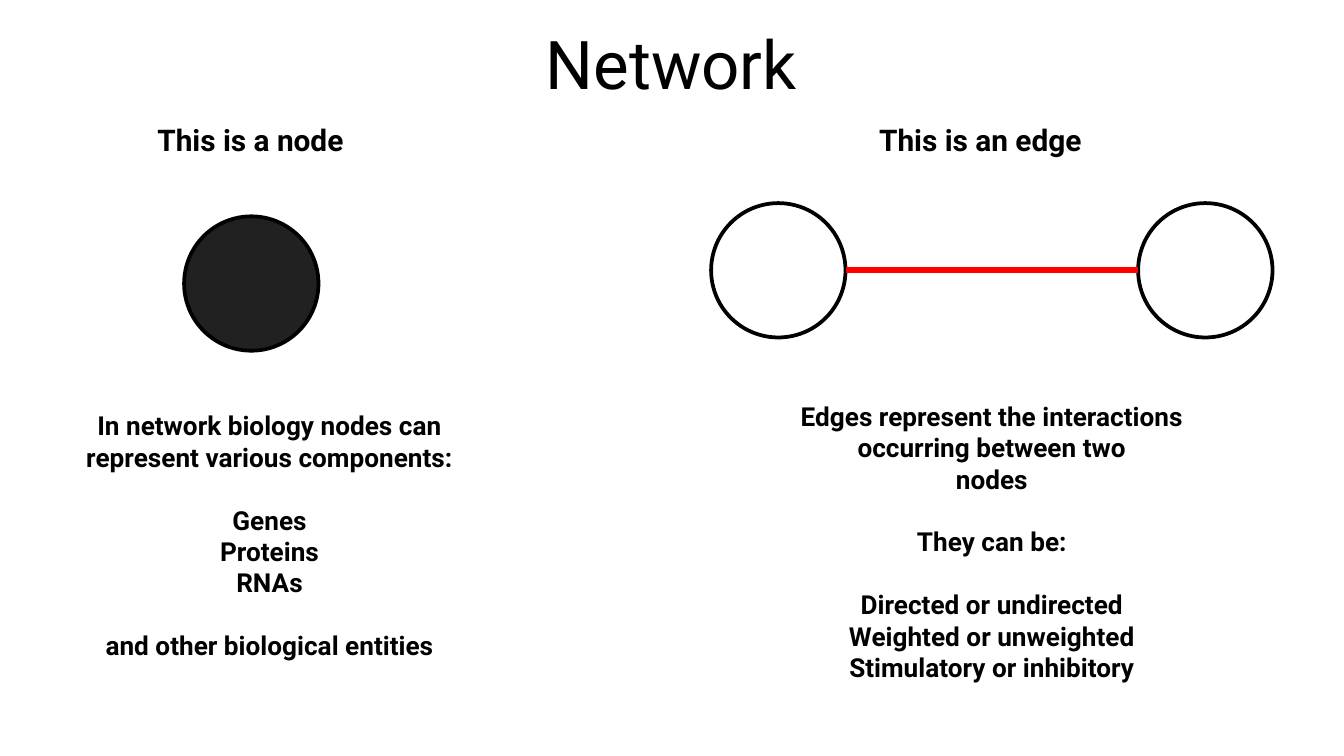
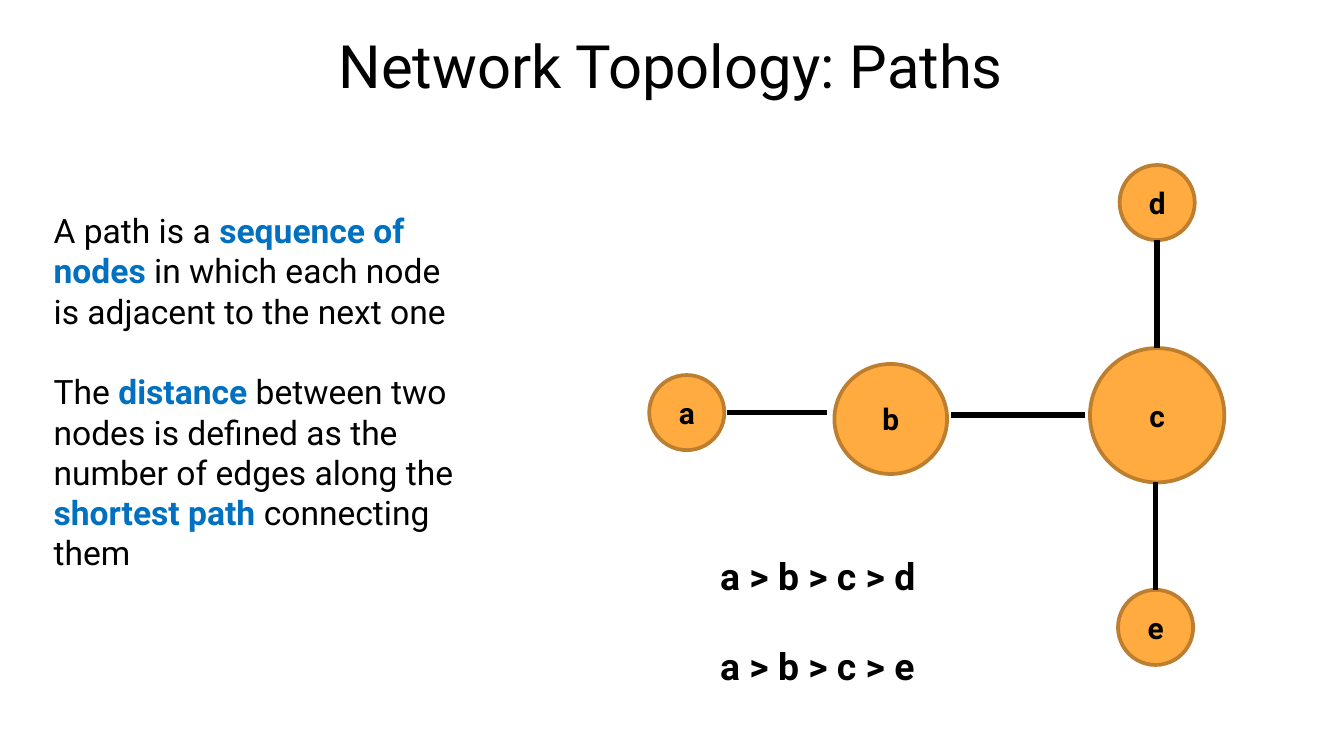
from dataclasses import dataclass

import pptx
import pptx.dml.color
import pptx.enum.shapes
import pptx.enum.text
import pptx.oxml
import pptx.oxml.ns
import pptx.util
from pptx.util import Cm, Pt

FONT = "Roboto"
LINE_HEIGHT = 1.2
COLOURS = {
    "text": "000000",
    "accent": "0070C0",
    "outline": "000000",
    "dark": "212121",
    "edge": "FF0000",
    "node": "FFAB40",
    "node_outline": "BD7F2F",
}
ALIGN = pptx.enum.text.PP_ALIGN
ANCHOR = pptx.enum.text.MSO_ANCHOR
LAYOUT_BODY, LAYOUT_COMPARISON = 1, 4


@dataclass
class Box:
    """A rectangle in centimetres."""
    left: float
    top: float
    width: float
    height: float


@dataclass
class Node:
    box: Box
    fill: str | None = None
    outline: str = "outline"
    label: str = ""


@dataclass
class Edge:
    start: tuple[float, float]
    end: tuple[float, float]
    colour: str = "outline"


@dataclass
class TextBlock:
    """Groups of lines, set apart by one line; *stars* mark accented words."""
    box: Box
    groups: list[list[str]]
    size: float
    bold: bool = True
    align: ALIGN = ALIGN.LEFT
    wrap: bool = True


def colour(name: str) -> pptx.dml.color.RGBColor:
    return pptx.dml.color.RGBColor.from_string(COLOURS[name])


def place(shape, box: Box) -> None:
    shape.left, shape.top = Cm(box.left), Cm(box.top)
    shape.width, shape.height = Cm(box.width), Cm(box.height)


def format_run(run, size: float, bold: bool, colour_name: str = "text") -> None:
    run.font.name = FONT
    run.font.size = Pt(size)
    run.font.bold = bold
    run.font.color.rgb = colour(colour_name)


def remove_bullet(paragraph) -> None:
    properties = paragraph._p.get_or_add_pPr()
    properties.set("marL", "0")
    properties.set("indent", "0")
    properties.append(pptx.oxml.parse_xml(
        f"<a:buNone {pptx.oxml.ns.nsdecls('a')}/>"))


def fill_text(shape, block: TextBlock) -> None:
    place(shape, block.box)
    frame = shape.text_frame
    frame.auto_size = pptx.enum.text.MSO_AUTO_SIZE.NONE
    frame.word_wrap = block.wrap
    frame.vertical_anchor = ANCHOR.TOP
    lines = [(line, group_index > 0 and line_index == 0)
             for group_index, group in enumerate(block.groups)
             for line_index, line in enumerate(group)]
    for index, (line, has_gap) in enumerate(lines):
        paragraph = frame.add_paragraph() if index else frame.paragraphs[0]
        remove_bullet(paragraph)
        paragraph.alignment = block.align
        paragraph.space_before = Pt(block.size * LINE_HEIGHT if has_gap else 0)
        for part_index, part in enumerate(line.split("*")):
            if part:
                accented = part_index % 2 == 1
                run = paragraph.add_run()
                run.text = part
                format_run(run, block.size, block.bold or accented,
                           "accent" if accented else "text")


def set_title(slide, text: str, size: float, top: float) -> None:
    title = slide.shapes.title
    fill_text(title, TextBlock(Box(0.85, top, 23.67, 1.6), [[text]], size,
                               bold=False, align=ALIGN.CENTER))
    frame = title.text_frame
    frame.margin_top = frame.margin_bottom = Cm(0.25)


def add_node(slide, node: Node) -> None:
    shape = slide.shapes.add_shape(
        pptx.enum.shapes.MSO_SHAPE.OVAL, 0, 0, 0, 0)
    place(shape, node.box)
    shape.shadow.inherit = False
    if node.fill:
        shape.fill.solid()
        shape.fill.fore_color.rgb = colour(node.fill)
    else:
        shape.fill.background()
    shape.line.color.rgb = colour(node.outline)
    shape.line.width = Pt(2)
    if node.label:
        frame = shape.text_frame
        frame.text = node.label
        frame.vertical_anchor = ANCHOR.MIDDLE
        paragraph = frame.paragraphs[0]
        paragraph.alignment = ALIGN.CENTER
        format_run(paragraph.runs[0], 16, True)


def add_edge(slide, edge: Edge) -> None:
    connector = slide.shapes.add_connector(
        pptx.enum.shapes.MSO_CONNECTOR.STRAIGHT,
        *(Cm(value) for value in edge.start + edge.end))
    connector.line.color.rgb = colour(edge.colour)
    connector.line.width = Pt(3)
    connector._element.spPr.append(pptx.oxml.parse_xml(
        f"<a:effectLst {pptx.oxml.ns.nsdecls('a')}/>"))


def add_graph(slide, nodes: list[Node], edges: list[Edge]) -> None:
    for node in nodes:
        add_node(slide, node)
    for edge in edges:
        add_edge(slide, edge)


def build_network(presentation) -> None:
    slide = presentation.slides.add_slide(
        presentation.slide_layouts[LAYOUT_COMPARISON])
    set_title(slide, "Network", 36, 0.18)
    blocks = [
        TextBlock(Box(2.72, 2.18, 4.09, 0.94), [["This is a node"]], 16,
                  wrap=False),
        TextBlock(Box(1.3, 7.62, 7.59, 5.05), [
            ["In network biology nodes can", "represent various components:"],
            ["Genes", "Proteins", "RNAs"],
            ["and other biological entities"],
        ], 14, align=ALIGN.CENTER),
        TextBlock(Box(16.36, 2.18, 4.39, 0.94), [["This is an edge"]], 16,
                  wrap=False),
        TextBlock(Box(14.12, 7.44, 9.25, 5.64), [
            ["Edges represent the interactions occurring between two", "nodes"],
            ["They can be:"],
            ["Directed or undirected", "Weighted or unweighted",
             "Stimulatory or inhibitory"],
        ], 14, align=ALIGN.CENTER),
    ]
    for index, block in enumerate(blocks, start=1):
        fill_text(slide.placeholders[index], block)

    diameter = 2.54
    left, right, top = 13.44, 21.51, 3.84
    middle = top + diameter / 2
    add_graph(
        slide,
        [Node(Box(3.48, 4.09, diameter, diameter), "dark"),
         Node(Box(left, top, diameter, diameter)),
         Node(Box(right, top, diameter, diameter))],
        [Edge((left + diameter, middle), (right, middle), "edge")])


def build_paths(presentation) -> None:
    slide = presentation.slides.add_slide(
        presentation.slide_layouts[LAYOUT_BODY])
    set_title(slide, "Network Topology: Paths", 32, 0.3)
    fill_text(slide.placeholders[1], TextBlock(Box(0.76, 3.84, 8.36, 7.19), [
        ["A path is a *sequence of*", "*nodes* in which each node",
         "is adjacent to the next one"],
        ["The *distance* between two", "nodes is defined as the",
         "number of edges along the", "*shortest path *connecting", "them"],
    ], 18, bold=False))

    small = 1.42
    boxes = {
        "a": Box(12.27, 7.09, small, small),
        "b": Box(15.77, 6.88, 2.13, 2.08),
        "c": Box(20.6, 6.58, 2.54, 2.54),
        "d": Box(21.16, 3.12, small, small),
        "e": Box(21.13, 11.15, small, small),
    }
    add_graph(
        slide,
        [Node(box, "node", "node_outline", label)
         for label, box in boxes.items()],
        [Edge((13.74, 7.8), (15.62, 7.8)),
         Edge((17.98, 7.85), (20.5, 7.85)),
         Edge((21.87, 4.53), (21.87, 6.58)),
         Edge((21.84, 9.12), (21.84, 11.15))])
    routes = slide.shapes.add_textbox(0, 0, 0, 0)
    fill_text(routes, TextBlock(Box(13.36, 10.34, 4.34, 2.82),
                                [["a > b > c > d"], ["a > b > c > e"]], 20,
                                wrap=False))


def main() -> None:
    presentation = pptx.Presentation()
    presentation.slide_width = Cm(25.4)
    presentation.slide_height = Cm(14.29)
    build_network(presentation)
    build_paths(presentation)
    presentation.save("out.pptx")


if __name__ == "__main__":
    main()
